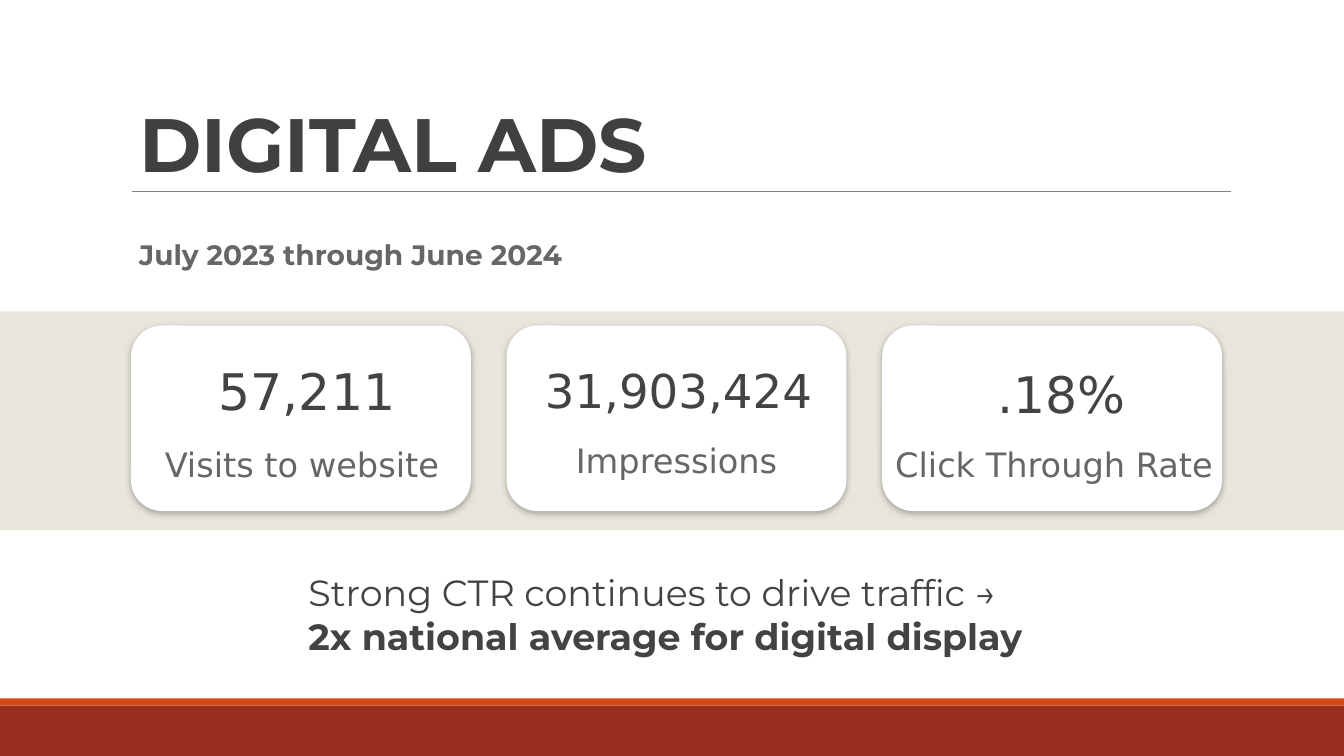
import pptx
import pptx.util
import pptx.dml.color
import pptx.enum.shapes
import pptx.enum.text
import pptx.oxml
import pptx.oxml.ns
from pptx.util import Inches

RGBColor = pptx.dml.color.RGBColor
SHAPES = pptx.enum.shapes.MSO_SHAPE
ALIGN = pptx.enum.text.PP_ALIGN

WHITE = RGBColor(0xFF, 0xFF, 0xFF)
SAND = RGBColor(0xE9, 0xE5, 0xDC)
BRICK = RGBColor(0x9B, 0x2D, 0x1F)
ORANGE = RGBColor(0xD3, 0x48, 0x17)
RULE_GRAY = RGBColor(0x80, 0x80, 0x80)
TITLE_GRAY = RGBColor(0x40, 0x40, 0x40)
DARK_GRAY = RGBColor(0x43, 0x43, 0x43)
MID_GRAY = RGBColor(0x66, 0x66, 0x66)

HEADING_FONT = "Montserrat"
FIGURE_FONT = "DejaVu Sans"
PAGE_WIDTH, PAGE_HEIGHT = 13.33, 7.5

CARD_WIDTH, CARD_HEIGHT, CARD_PITCH = 3.37, 1.84, 3.725
TEXT_WIDTH = 3.51
# Value, its size, its shift from the card's centre and top; then the same for the label
CARDS = [
    (("57,211", 36, 0.06, 0.21), ("Visits to website", 24, 0.01, 1.04)),
    (("31,903,424", 33.3, 0.02, 0.23), ("Impressions", 24, 0, 1.0)),
    ((".18%", 36, 0.09, 0.24), ("Click Through Rate", 24, 0.02, 1.04)),
]

CARD_SHADOW = (
    f'<a:effectLst {pptx.oxml.ns.nsdecls("a")}>'
    '<a:outerShdw blurRad="57150" dist="19050" dir="5400000" algn="bl" rotWithShape="0">'
    '<a:srgbClr val="666666"><a:alpha val="50000"/></a:srgbClr>'
    '</a:outerShdw></a:effectLst>'
)


def add_block(page, kind, left, top, width, height, color):
    block = page.shapes.add_shape(
        kind, Inches(left), Inches(top), Inches(width), Inches(height))
    block.shadow.inherit = False
    block.fill.solid()
    block.fill.fore_color.rgb = color
    block.line.fill.background()
    return block


def add_text(page, left, top, width, height, pieces, size, font, color, align=ALIGN.LEFT):
    """Place one paragraph made of (text, bold) pieces."""
    box = page.shapes.add_textbox(Inches(left), Inches(top), Inches(width), Inches(height))
    frame = box.text_frame
    frame.word_wrap = True
    frame.margin_left = frame.margin_right = Inches(0.13)
    frame.margin_top = frame.margin_bottom = Inches(0.13)
    para = frame.paragraphs[0]
    para.alignment = align
    for text, bold in pieces:
        span = para.add_run()
        span.text = text
        span.font.bold = bold
        span.font.size = pptx.util.Pt(size)
        span.font.name = font
        span.font.color.rgb = color


def add_header(page, left, top, width):
    add_text(page, left, top, width, 1.17, [("DIGITAL ADS", True)],
             54, HEADING_FONT, TITLE_GRAY)
    # Rule under the title
    rule_left, rule_top = Inches(left + 0.06), Inches(top + 1.07)
    rule = page.shapes.add_connector(
        pptx.enum.shapes.MSO_CONNECTOR.STRAIGHT,
        rule_left, rule_top, rule_left + Inches(10.9), rule_top)
    rule.line.color.rgb = RULE_GRAY
    rule.line.width = pptx.util.Pt(0.5)
    rule._element.spPr.append(
        pptx.oxml.parse_xml(f'<a:effectLst {pptx.oxml.ns.nsdecls("a")}/>'))
    add_text(page, left, top + 1.4, width, 0.6, [("July 2023 through June 2024", True)],
             20, HEADING_FONT, MID_GRAY)


def add_card(page, left, top, value, label):
    card = add_block(page, SHAPES.ROUNDED_RECTANGLE, left, top, CARD_WIDTH, CARD_HEIGHT, WHITE)
    card.adjustments[0] = 0.167
    properties = card._element.spPr
    properties.remove(properties.find(pptx.oxml.ns.qn("a:effectLst")))
    properties.append(pptx.oxml.parse_xml(CARD_SHADOW))
    text_left = left + (CARD_WIDTH - TEXT_WIDTH) / 2
    for (text, size, shift, drop), height, color in (
            (value, 0.88, DARK_GRAY), (label, 0.67, MID_GRAY)):
        add_text(page, text_left + shift, top + drop, TEXT_WIDTH, height, [(text, False)],
                 size, FIGURE_FONT, color, ALIGN.CENTER)


def add_card_band(page, top, height):
    add_block(page, SHAPES.RECTANGLE, 0, top, PAGE_WIDTH, height, SAND)
    for index, (value, label) in enumerate(CARDS):
        add_card(page, 1.3 + index * CARD_PITCH, top + 0.14, value, label)


def add_takeaway(page, left, top, width):
    add_text(page, left, top, width, 1.15,
             [("Strong CTR continues to drive traffic → ", False),
              ("2x national average for digital display", True)],
             26, HEADING_FONT, DARK_GRAY)


def add_footer(page, top):
    add_block(page, SHAPES.RECTANGLE, 0, top, PAGE_WIDTH, PAGE_HEIGHT - top, BRICK)
    add_block(page, SHAPES.RECTANGLE, 0, top - 0.07, PAGE_WIDTH, 0.07, ORANGE)


def main():
    deck = pptx.Presentation()
    deck.slide_width, deck.slide_height = Inches(PAGE_WIDTH), Inches(PAGE_HEIGHT)
    page = deck.slides.add_slide(deck.slide_layouts[6])
    add_footer(page, 7)
    add_header(page, 1.25, 0.83, 11.3)
    add_card_band(page, 3.09, 2.17)
    add_takeaway(page, 2.93, 5.53, 7.47)
    deck.save("out.pptx")


if __name__ == "__main__":
    main()
